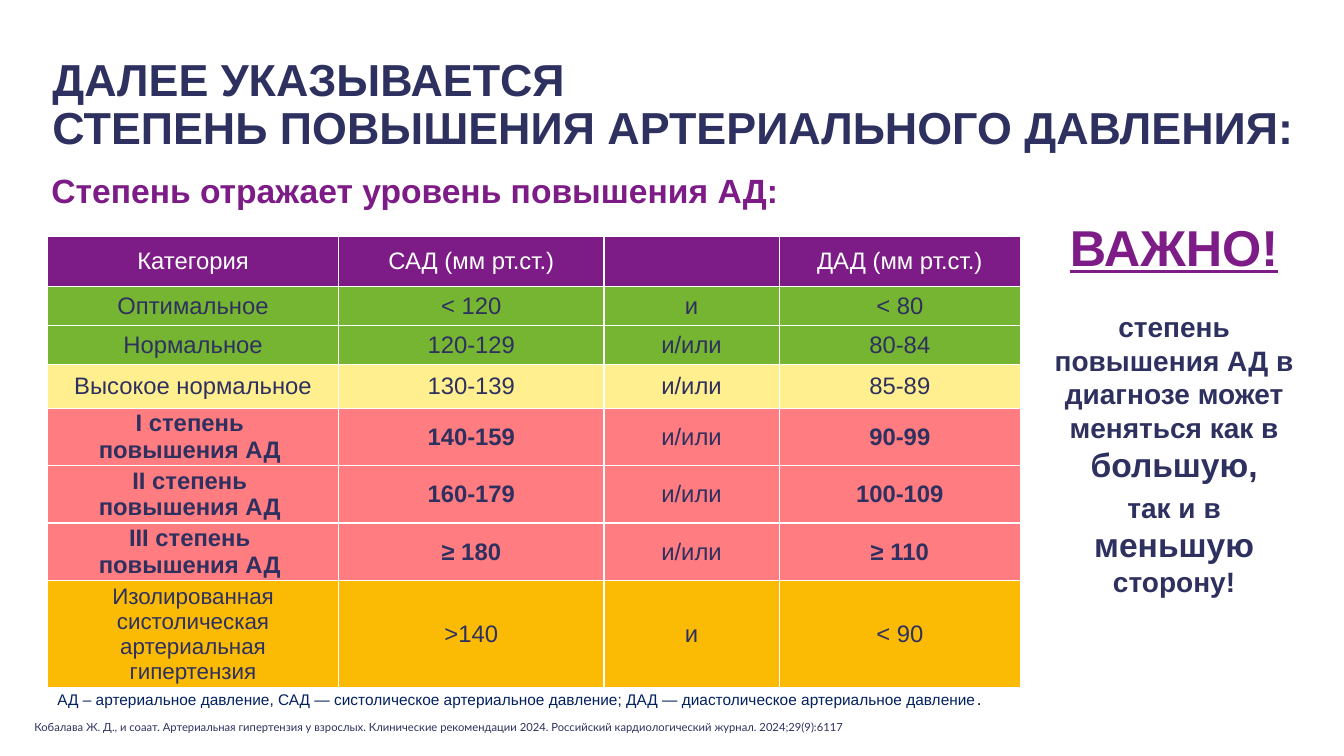
import pptx
import pptx.dml.color
import pptx.enum.text
import pptx.util
from pptx.util import Inches

COLORS = {
    "navy": "2E305F",
    "purple": "7D1C87",
    "white": "FFFFFF",
    "green": "76B531",
    "yellow": "FFEF8F",
    "red": "FF7C80",
    "orange": "FBBB05",
    "note": "002060",
    "black": "000000",
}
CENTER = pptx.enum.text.PP_ALIGN.CENTER
MIDDLE = pptx.enum.text.MSO_ANCHOR.MIDDLE


def style_font(font, size, color, bold=False, name="Arial"):
    font.name = name
    font.size = pptx.util.Pt(size)
    font.bold = bold
    font.color.rgb = pptx.dml.color.RGBColor.from_string(COLORS[color])


def add_text_frame(left, top, width, height, margins=(0.1, 0.05, 0.1, 0.05)):
    frame = slide.shapes.add_textbox(
        Inches(left), Inches(top), Inches(width), Inches(height)
    ).text_frame
    frame.word_wrap = True
    frame.margin_left, frame.margin_top, frame.margin_right, frame.margin_bottom = map(
        Inches, margins
    )
    return frame


presentation = pptx.Presentation()
presentation.slide_width = Inches(13.33)
presentation.slide_height = Inches(7.5)
slide = presentation.slides.add_slide(presentation.slide_layouts[6])

title = add_text_frame(0.52, 0.52, 12.6, 1.06, (0, 0, 0, 0))
title.vertical_anchor = MIDDLE
paragraph = title.paragraphs[0]
paragraph.text = "ДАЛЕЕ УКАЗЫВАЕТСЯ\vСТЕПЕНЬ ПОВЫШЕНИЯ АРТЕРИАЛЬНОГО ДАВЛЕНИЯ:"
paragraph.line_spacing = 0.9
style_font(paragraph.font, 32, "navy", bold=True)

subtitle = add_text_frame(0.51, 1.73, 12.28, 0.5, (0, 0, 0, 0))
paragraph = subtitle.paragraphs[0]
paragraph.text = "Степень отражает уровень повышения АД:"
paragraph.line_spacing = 0.9
style_font(paragraph.font, 24, "purple", bold=True)

column_widths = [2.89, 2.63, 1.74, 2.39]
pressure_rows = [
    (0.49, "purple", ["Категория", "САД (мм рт.ст.)", "", "ДАД (мм рт.ст.)"]),
    (0.39, "green", ["Оптимальное", "< 120", "и", "< 80"]),
    (0.39, "green", ["Нормальное", "120-129", "и/или", "80-84"]),
    (0.43, "yellow", ["Высокое нормальное", "130-139", "и/или", "85-89"]),
    (0.57, "red", ["I степень \nповышения АД ", "140-159", "и/или", "90-99"]),
    (0.57, "red", ["II степень \nповышения АД ", "160-179", "и/или", "100-109"]),
    (0.57, "red", ["III степень \nповышения АД ", "≥ 180", "и/или", "≥ 110"]),
    (1.06, "orange",
     ["Изолированная систолическая артериальная гипертензия", ">140", "и", "< 90"]),
]
table = slide.shapes.add_table(
    len(pressure_rows), len(column_widths),
    Inches(0.47), Inches(2.35), Inches(9.65), Inches(4.47),
).table
for column, width in zip(table.columns, column_widths):
    column.width = Inches(width)
for row, (height, fill, texts) in zip(table.rows, pressure_rows):
    row.height = Inches(height)
    for index, (cell, text) in enumerate(zip(row.cells, texts)):
        cell.fill.solid()
        cell.fill.fore_color.rgb = pptx.dml.color.RGBColor.from_string(COLORS[fill])
        cell.vertical_anchor = MIDDLE
        cell.margin_left = cell.margin_right = Inches(0.07)
        cell.margin_top = cell.margin_bottom = 0
        cell.text = text
        size = 16 if fill == "orange" and index == 0 else 17
        color = "white" if fill == "purple" else "navy"
        for paragraph in cell.text_frame.paragraphs:
            paragraph.alignment = CENTER
            style_font(paragraph.font, size, color, bold=fill == "red" and index != 2)

abbreviations = add_text_frame(0.47, 6.78, 9.65, 0.3)
for text, size, color in [
    ("АД – артериальное давление, САД — систолическое артериальное давление; "
     "ДАД — диастолическое артериальное давление", 11, "note"),
    (".", 12, "black"),
]:
    run = abbreviations.paragraphs[0].add_run()
    run.text = text
    style_font(run.font, size, color)

important = add_text_frame(10.25, 2.09, 2.79, 3.94)
paragraph = important.paragraphs[0]
paragraph.text = "ВАЖНО!"
paragraph.alignment = CENTER
style_font(paragraph.font, 36, "purple", bold=True)
paragraph.font.underline = True
for space_before, lines in [
    (24, [[("степень повышения АД в диагнозе может", 20)],
          [("меняться как в ", 20), ("большую,", 24)]]),
    (4, [[("так и в", 20)],
         [("меньшую", 24), (" сторону!", 20)]]),
]:
    paragraph = important.add_paragraph()
    paragraph.alignment = CENTER
    paragraph.space_before = pptx.util.Pt(space_before)
    for index, line in enumerate(lines):
        if index:
            paragraph.add_line_break()
        for text, size in line:
            run = paragraph.add_run()
            run.text = text
            style_font(run.font, size, "navy", bold=True)

reference = add_text_frame(0.34, 7.02, 9.06, 0.4, (0, 0.05, 0.1, 0.05))
reference.vertical_anchor = MIDDLE
paragraph = reference.paragraphs[0]
paragraph.text = (
    "Кобалава Ж. Д., и соаат. Артериальная гипертензия у взрослых. "
    "Клинические рекомендации 2024. Российский кардиологический журнал. 2024;29(9):6117"
)
paragraph.line_spacing = 0.9
style_font(paragraph.font, 8, "navy", name="Lato")

presentation.save("out.pptx")
